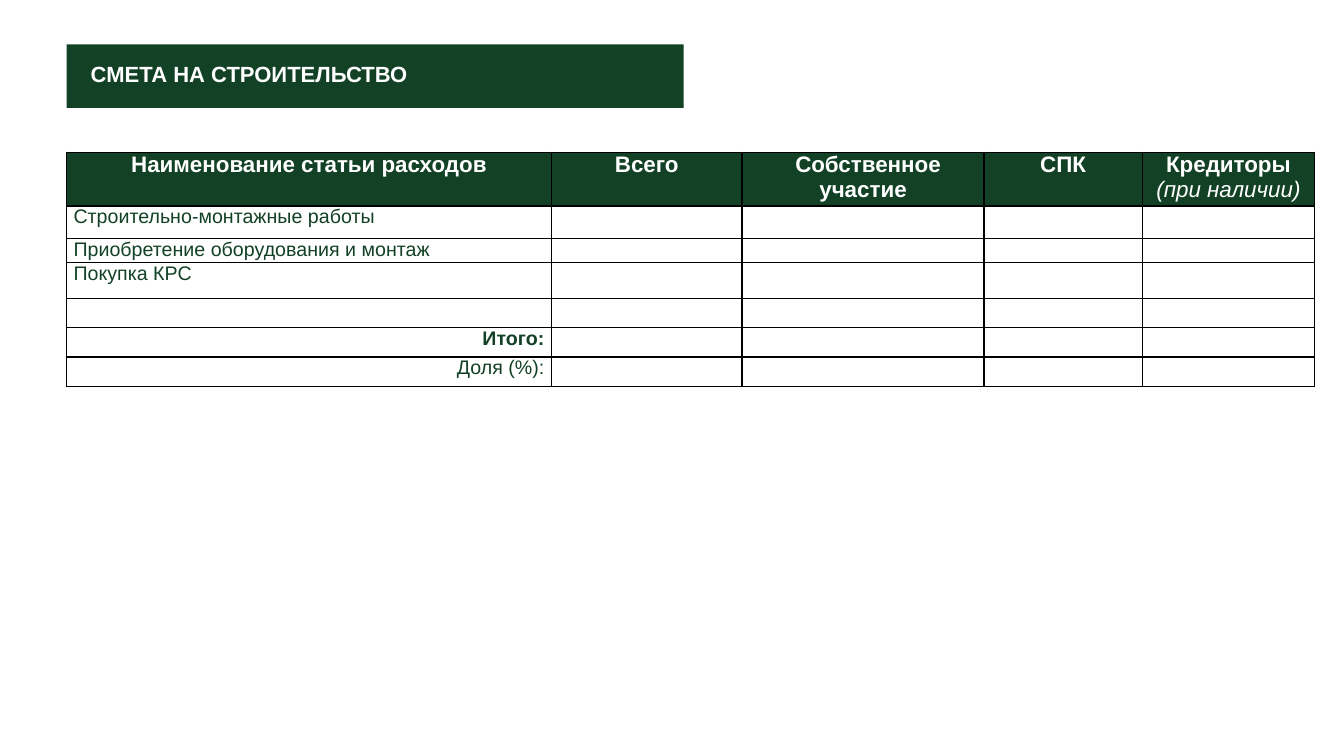
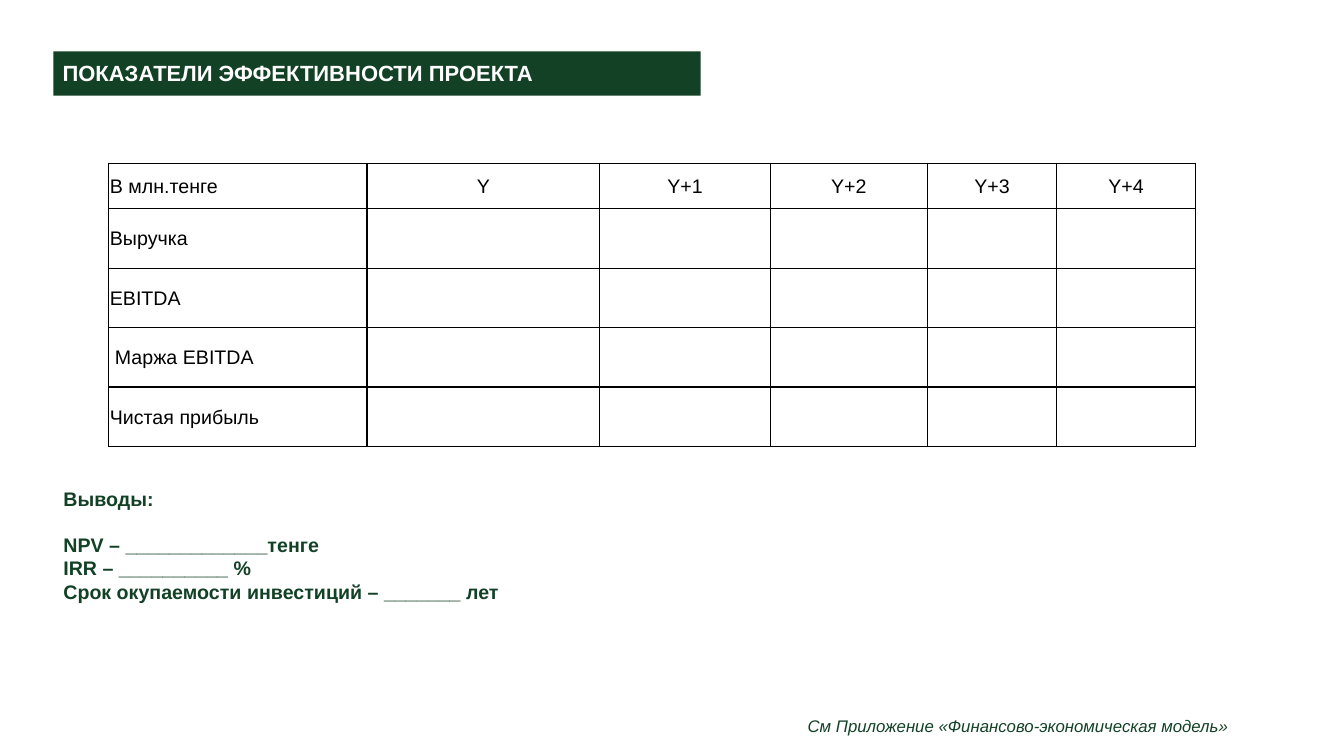
from lxml.etree import SubElement
from pptx import Presentation
from pptx.dml.color import RGBColor
from pptx.enum.shapes import MSO_SHAPE
from pptx.enum.text import MSO_ANCHOR as ANCHOR, PP_ALIGN as ALIGN
from pptx.oxml.ns import qn
from pptx.util import Inches, Pt

GREEN = RGBColor(0x12, 0x41, 0x26)
WHITE = RGBColor(0xFF, 0xFF, 0xFF)
BLACK = RGBColor(0, 0, 0)
FONT = "Arial"
SLIDE_W, SLIDE_H = 13.33, 7.5
BODY_SIZE = 14
LINE_SPACING = 1.15

BUDGET = {
    "title": "СМЕТА НА СТРОИТЕЛЬСТВО",
    "band": (0.66, 0.44, 6.12, 0.63),
    "title_box": (0.88, 0.58, 6.46, 0.28),
    "origin": (0.66, 1.51),
    "columns": [4.81, 1.89, 2.4, 1.57, 1.71],
    "rows": [0.53, 0.32, 0.24, 0.36, 0.29, 0.29, 0.29],
    "margins": (0.07, 0, 0.07, 0),
    "header": ["Наименование статьи расходов", "Всего", "Собственное участие",
               "СПК", "Кредиторы "],
    "header_note": "(при наличии)",
    "items": ["Строительно-монтажные работы", "Приобретение оборудования и монтаж",
              "Покупка КРС", "", "Итого:", "Доля (%):"],
    "summary": ("Итого:", "Доля (%):"),
    "total": "Итого:",
}
INDICATORS = {
    "title": "ПОКАЗАТЕЛИ ЭФФЕКТИВНОСТИ ПРОЕКТА",
    "band": (0.53, 0.51, 6.42, 0.44),
    "title_box": (0.6, 0.57, 6.35, 0.28),
    "origin": (1.08, 1.62),
    "columns": [2.56, 2.31, 1.69, 1.56, 1.28, 1.38],
    "rows": [0.45] + [0.59] * 4,
    "margins": (0.01, 0.01, 0.01, 0),
    "header": ["В млн.тенге", "Y"] + [f"Y+{year}" for year in range(1, 5)],
    "items": ["Выручка", "EBITDA", "Маржа EBITDA", "Чистая прибыль"],
    "indented": "Маржа EBITDA",
}
CONCLUSIONS = ["Выводы:", "NPV – _____________тенге", "IRR – __________ %",
               "Срок окупаемости инвестиций – _______ лет"]
REFERENCE = "См Приложение «Финансово-экономическая модель»"


def style_run(run, size, color, bold=False, italic=False):
    font = run.font
    font.name, font.size, font.bold, font.italic = FONT, Pt(size), bold, italic
    font.color.rgb = color


def set_margins(target, margins):
    (target.margin_left, target.margin_top,
     target.margin_right, target.margin_bottom) = map(Inches, margins)


def add_text(slide, box, lines, margins, size, color, anchor=ANCHOR.TOP, **weight):
    frame = slide.shapes.add_textbox(*map(Inches, box)).text_frame
    frame.word_wrap = True
    frame.vertical_anchor = anchor
    set_margins(frame, margins)
    frame.text = "\n".join(lines)
    for paragraph in frame.paragraphs:
        for run in paragraph.runs:
            style_run(run, size, color, **weight)
    return frame


def add_title(slide, content):
    band = slide.shapes.add_shape(MSO_SHAPE.RECTANGLE, *map(Inches, content["band"]))
    band.shadow.inherit = False
    band.fill.solid()
    band.fill.fore_color.rgb = GREEN
    band.line.fill.background()
    add_text(slide, content["title_box"], [content["title"]], (0.02, 0.02, 0, 0),
             15.7, WHITE, ANCHOR.MIDDLE, bold=True)


def add_borders(cell):
    properties = cell._tc.get_or_add_tcPr()
    for position, side in enumerate(("lnL", "lnR", "lnT", "lnB")):
        border = SubElement(properties, qn(f"a:{side}"), w=str(Pt(1)))
        properties.insert(position, border)
        fill = SubElement(border, qn("a:solidFill"))
        SubElement(fill, qn("a:srgbClr"), val=str(BLACK))


def indent(paragraph, inches, attribute):
    paragraph._p.get_or_add_pPr().set(attribute, str(Inches(inches)))


def add_grid(slide, content, anchor):
    columns, rows = content["columns"], content["rows"]
    size = map(Inches, (*content["origin"], sum(columns), sum(rows)))
    table = slide.shapes.add_table(len(rows), len(columns), *size).table
    table.first_row = table.horz_banding = False
    for column, width in zip(table.columns, columns):
        column.width = Inches(width)
    for row, height in zip(table.rows, rows):
        row.height = Inches(height)
    blanks = [""] * (len(columns) - 1)
    texts = [content["header"]] + [[item] + blanks for item in content["items"]]
    for row, row_texts in zip(table.rows, texts):
        for cell, text in zip(row.cells, row_texts):
            cell.fill.background()
            cell.vertical_anchor = anchor
            set_margins(cell, content["margins"])
            add_borders(cell)
            paragraph = cell.text_frame.paragraphs[0]
            if text:
                paragraph.text = text
            else:
                SubElement(paragraph._p, qn("a:endParaRPr"), sz=str(BODY_SIZE * 100))
    return table


def build_budget(slide):
    add_title(slide, BUDGET)
    table = add_grid(slide, BUDGET, ANCHOR.TOP)
    header, *body = table.rows
    for cell in header.cells:
        cell.fill.solid()
        cell.fill.fore_color.rgb = GREEN
        paragraph = cell.text_frame.paragraphs[0]
        paragraph.alignment = ALIGN.CENTER
        style_run(paragraph.runs[0], 16, WHITE, bold=True)
    indent(header.cells[2].text_frame.paragraphs[0], 0.1, "indent")
    note = paragraph.add_run()
    note.text = BUDGET["header_note"]
    style_run(note, 16, WHITE, italic=True)
    for row, item in zip(body, BUDGET["items"]):
        paragraph = row.cells[0].text_frame.paragraphs[0]
        paragraph.alignment = ALIGN.RIGHT if item in BUDGET["summary"] else ALIGN.JUSTIFY
        for run in paragraph.runs:
            style_run(run, BODY_SIZE, GREEN, bold=item == BUDGET["total"])


def build_indicators(slide):
    add_title(slide, INDICATORS)
    conclusions = add_text(slide, (0.53, 4.78, 12.15, 1.63), CONCLUSIONS,
                           (0.1, 0.05, 0.1, 0.05), BODY_SIZE, GREEN, bold=True)
    conclusions.paragraphs[1].space_before = Pt(BODY_SIZE * LINE_SPACING)
    add_text(slide, (7.99, 7.09, 5.01, 0.22), [REFERENCE], (0.02, 0.01, 0, 0),
             12, GREEN, italic=True)
    table = add_grid(slide, INDICATORS, ANCHOR.MIDDLE)
    for row in table.rows:
        for number, cell in enumerate(row.cells):
            paragraph = cell.text_frame.paragraphs[0]
            paragraph.alignment = ALIGN.CENTER if number else ALIGN.LEFT
            if paragraph.text == INDICATORS["indented"]:
                indent(paragraph, 0.05, "marL")
            for run in paragraph.runs:
                style_run(run, BODY_SIZE, BLACK)


def main():
    deck = Presentation()
    deck.slide_width, deck.slide_height = Inches(SLIDE_W), Inches(SLIDE_H)
    for build in (build_budget, build_indicators):
        build(deck.slides.add_slide(deck.slide_layouts[6]))
    deck.save("out.pptx")


if __name__ == "__main__":
    main()
